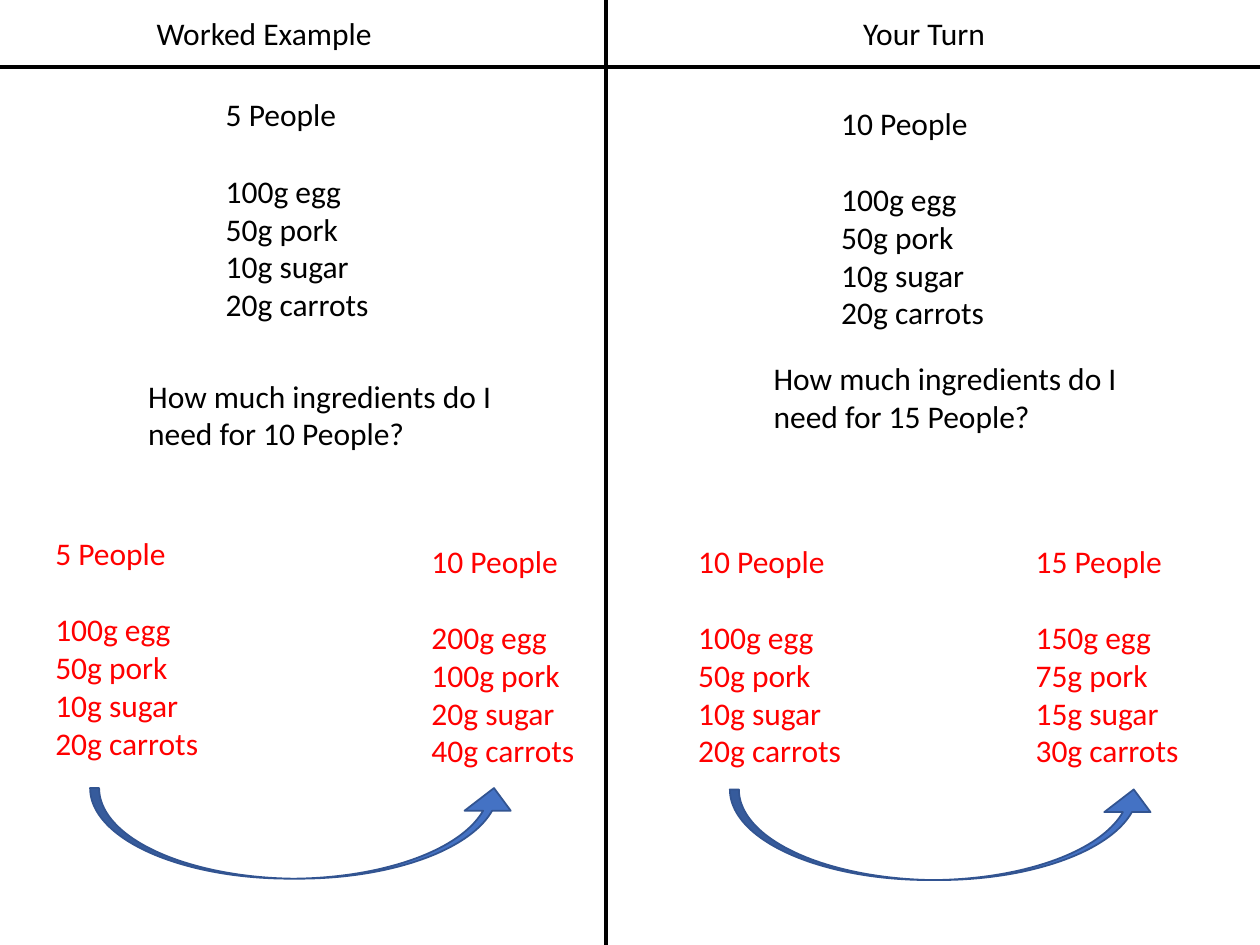
import pptx
import pptx.util
import pptx.dml.color
import pptx.enum.shapes
import pptx.enum.text
import pptx.oxml

Pt = pptx.util.Pt

BLACK, RED, BLUE, DARK_BLUE = "000000", "FF0000", "4472C4", "325491"
FONT_SIZE = 18
LINE_HEIGHT = 22

HEADINGS = [("Worked Example", 81.4), ("Your Turn", 458.6)]
DIVIDERS = [(346.3, 0, 346.3, 540), (0, 38.2, 720, 38.2)]
QUESTIONS = [
    ("How much ingredients do I need for 10 People?", 77.6, 211.7),
    ("How much ingredients do I need for 15 People?", 435, 201.6),
]
INGREDIENTS = ["egg", "pork", "sugar", "carrots"]
RECIPES = [
    (5, [100, 50, 10, 20], 121.9, 51, 132, BLACK),
    (10, [100, 50, 10, 20], 473.6, 55.7, 132, BLACK),
    (15, [150, 75, 15, 30], 584.7, 306, 102, RED),
    (10, [100, 50, 10, 20], 391.9, 306, 106.5, RED),
    (10, [200, 100, 20, 40], 239.5, 306, 102, RED),
    (5, [100, 50, 10, 20], 24.5, 301.5, 106.5, RED),
]
ARROWS = [(147.6, 354.2), (513.2, 355)]
ARROW_SIZE = (51.8, 244)
ARROW_ADJUSTMENTS = [0.1, 0.51, 0.25]


def color(value):
    return pptx.dml.color.RGBColor.from_string(value)


def add_text(slide, lines, left, top, width, height, text_color=BLACK, centered=False):
    box = slide.shapes.add_textbox(Pt(left), Pt(top), Pt(width), Pt(height))
    frame = box.text_frame
    frame.word_wrap = True
    frame.auto_size = pptx.enum.text.MSO_AUTO_SIZE.SHAPE_TO_FIT_TEXT
    frame.text = "\n".join(lines)
    for paragraph in frame.paragraphs:
        paragraph.font.name = "Calibri"
        paragraph.font.size = Pt(FONT_SIZE)
        paragraph.font.color.rgb = color(text_color)
        if centered:
            paragraph.alignment = pptx.enum.text.PP_ALIGN.CENTER
    return frame


def add_recipe(slide, people, amounts, left, top, width, text_color):
    lines = [f"{people} People"]
    lines += [f"{amount}g {name}" for amount, name in zip(amounts, INGREDIENTS)]
    frame = add_text(slide, lines, left, top, width, 138.2, text_color)
    frame.paragraphs[1].space_before = Pt(LINE_HEIGHT)


def add_divider(slide, *ends):
    line = slide.shapes.add_connector(
        pptx.enum.shapes.MSO_CONNECTOR.STRAIGHT, *map(Pt, ends))
    line.line.color.rgb = color(BLACK)
    line.line.width = Pt(2.5)
    line._element.spPr.append(pptx.oxml.parse_xml(
        '<a:effectLst xmlns:a="http://schemas.openxmlformats.org/drawingml/2006/main"/>'))


def add_arrow(slide, left, top):
    shape = slide.shapes.add_shape(
        pptx.enum.shapes.MSO_SHAPE.CURVED_RIGHT_ARROW,
        Pt(left), Pt(top), *map(Pt, ARROW_SIZE))
    shape.rotation = 270
    for index, value in enumerate(ARROW_ADJUSTMENTS):
        shape.adjustments[index] = value
    shape.shadow.inherit = False
    shape.fill.solid()
    shape.fill.fore_color.rgb = color(BLUE)
    shape.line.color.rgb = color(DARK_BLUE)
    shape.line.width = Pt(1)


def main():
    presentation = pptx.Presentation()
    presentation.slide_width, presentation.slide_height = Pt(720), Pt(540)
    slide = presentation.slides.add_slide(presentation.slide_layouts[6])
    for heading, left in HEADINGS:
        add_text(slide, [heading], left, 4.5, 139, 29, centered=True)
    for divider in DIVIDERS:
        add_divider(slide, *divider)
    for question, left, top in QUESTIONS:
        add_text(slide, [question], left, top, 220.3, 51)
    for recipe in RECIPES:
        add_recipe(slide, *recipe)
    for left, top in ARROWS:
        add_arrow(slide, left, top)
    presentation.save("out.pptx")


if __name__ == "__main__":
    main()
